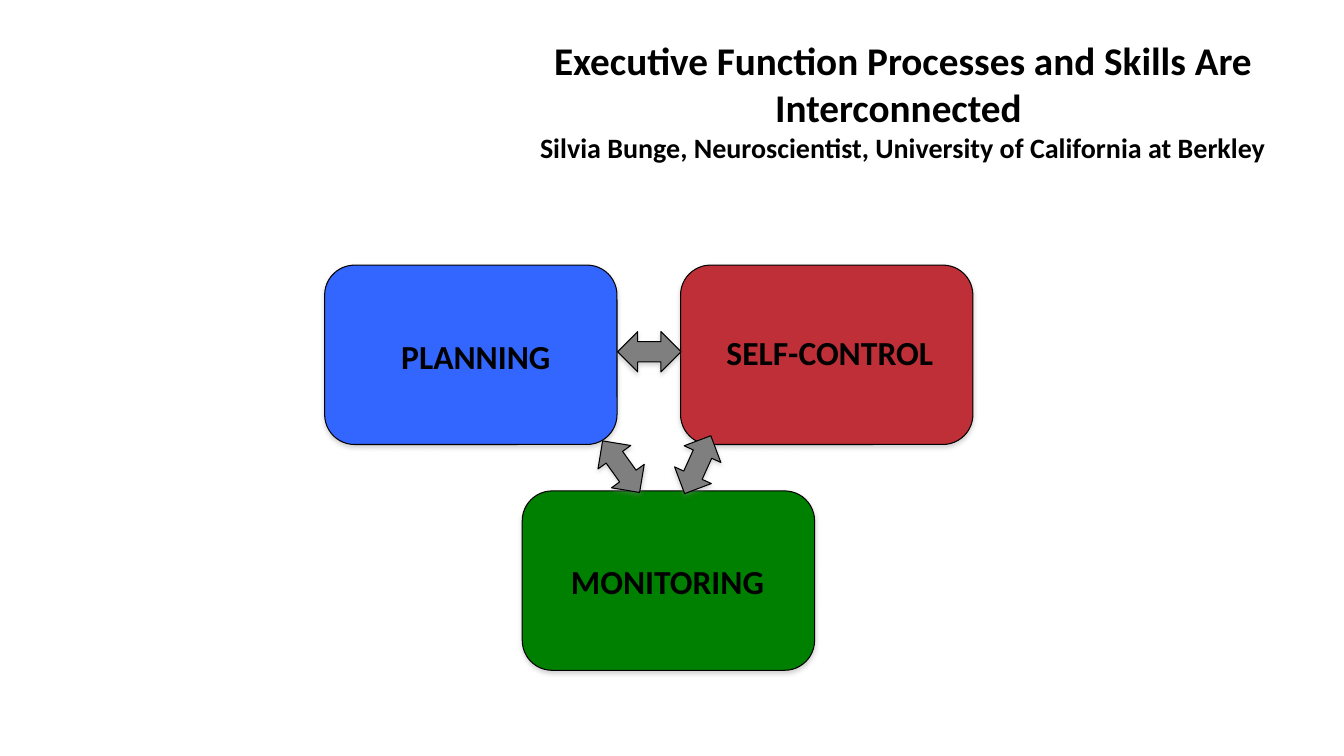
from lxml import etree
from pptx import Presentation
from pptx import util as u
from pptx.dml.color import RGBColor
from pptx.enum import shapes, text
from pptx.oxml.ns import qn

WIDTH, HEIGHT = 13.33, 7.5
FONT, BLACK, GREY = "Calibri", "000000", "7F7F7F"

TITLE = "Executive Function Processes and Skills Are Interconnected "
CREDIT = "Silvia Bunge, Neuroscientist, University of California at Berkley"
TITLE_AREA = (5.24, 0.3, 7.43, 1.38)

BOX_SIZE = (2.9, 1.78)
LEFT_X, RIGHT_X, LOWER_X = 3.22, 6.75, 5.18
TOP_Y, LOWER_Y = 2.63, 4.87
# left, top, fill, label, label centre relative to the box centre
PROCESSES = [
    (LEFT_X, TOP_Y, "3366FF", "PLANNING", (0.05, 0.01)),
    (RIGHT_X, TOP_Y, "BF2F37", "SELF-CONTROL", (0.03, -0.03)),
    (LOWER_X, LOWER_Y, "008000", "MONITORING", (-0.01, 0)),
]
LABEL_SIZE = (2.3, 0.5)

ARROW_SIZE = (RIGHT_X - LEFT_X - BOX_SIZE[0], 0.4)
# centre x, centre y, rotation
ARROWS = [(6.44, 3.49, 0), (6.92, 4.61, 114.4), (6.16, 4.63, 54.4)]


def colour(value):
    return RGBColor.from_string(value)


def inches(*lengths):
    return [u.Inches(length) for length in lengths]


def centred(x, y, size):
    return x - size[0] / 2, y - size[1] / 2, *size


def add_shadow(shape):
    """Give the shape a soft grey shadow falling straight down."""
    shape.shadow.inherit = False
    effects = shape._element.spPr.find(qn("a:effectLst"))
    outer = etree.SubElement(effects, qn("a:outerShdw"), blurRad=str(u.Pt(3.1)),
                             dist=str(u.Pt(1.8)), dir="5400000", rotWithShape="0")
    tint = etree.SubElement(outer, qn("a:srgbClr"), val="808080")
    etree.SubElement(tint, qn("a:alpha"), val="35000")


def add_block(page, kind, area, fill, adjustments, rotation=0):
    shape = page.shapes.add_shape(kind, *inches(*area))
    shape.rotation = rotation
    for index, value in enumerate(adjustments):
        shape.adjustments[index] = value
    shape.fill.solid()
    shape.fill.fore_color.rgb = colour(fill)
    shape.line.color.rgb = colour(BLACK)
    shape.line.width = u.Pt(0.75)
    add_shadow(shape)


def add_text(page, area, *parts):
    """Add one centred paragraph; each part is (wording, size) on its own line."""
    box = page.shapes.add_textbox(*inches(*area))
    frame = box.text_frame
    frame.word_wrap = True
    frame.vertical_anchor = text.MSO_ANCHOR.MIDDLE
    para = frame.paragraphs[0]
    para.alignment = text.PP_ALIGN.CENTER
    for index, (wording, size) in enumerate(parts):
        if index:
            para.add_line_break()
        span = para.add_run()
        span.text = wording
        style = {"name": FONT, "size": u.Pt(size), "bold": True}
        for name, value in style.items():
            setattr(span.font, name, value)
        span.font.color.rgb = colour(BLACK)


def main():
    deck = Presentation()
    deck.slide_width, deck.slide_height = inches(WIDTH, HEIGHT)
    page = deck.slides.add_slide(deck.slide_layouts[6])

    add_text(page, TITLE_AREA, (TITLE, 28), (CREDIT, 20))
    for left, top, fill, label, shift in PROCESSES:
        add_block(page, shapes.MSO_SHAPE.ROUNDED_RECTANGLE,
                  (left, top, *BOX_SIZE), fill, [0.167])
    for x, y, rotation in ARROWS:
        add_block(page, shapes.MSO_SHAPE.LEFT_RIGHT_ARROW,
                  centred(x, y, ARROW_SIZE), GREY, [0.5, 0.5], rotation)
    for left, top, fill, label, shift in PROCESSES:
        x = left + BOX_SIZE[0] / 2 + shift[0]
        y = top + BOX_SIZE[1] / 2 + shift[1]
        add_text(page, centred(x, y, LABEL_SIZE), (label, 24))

    deck.save("out.pptx")


if __name__ == "__main__":
    main()
